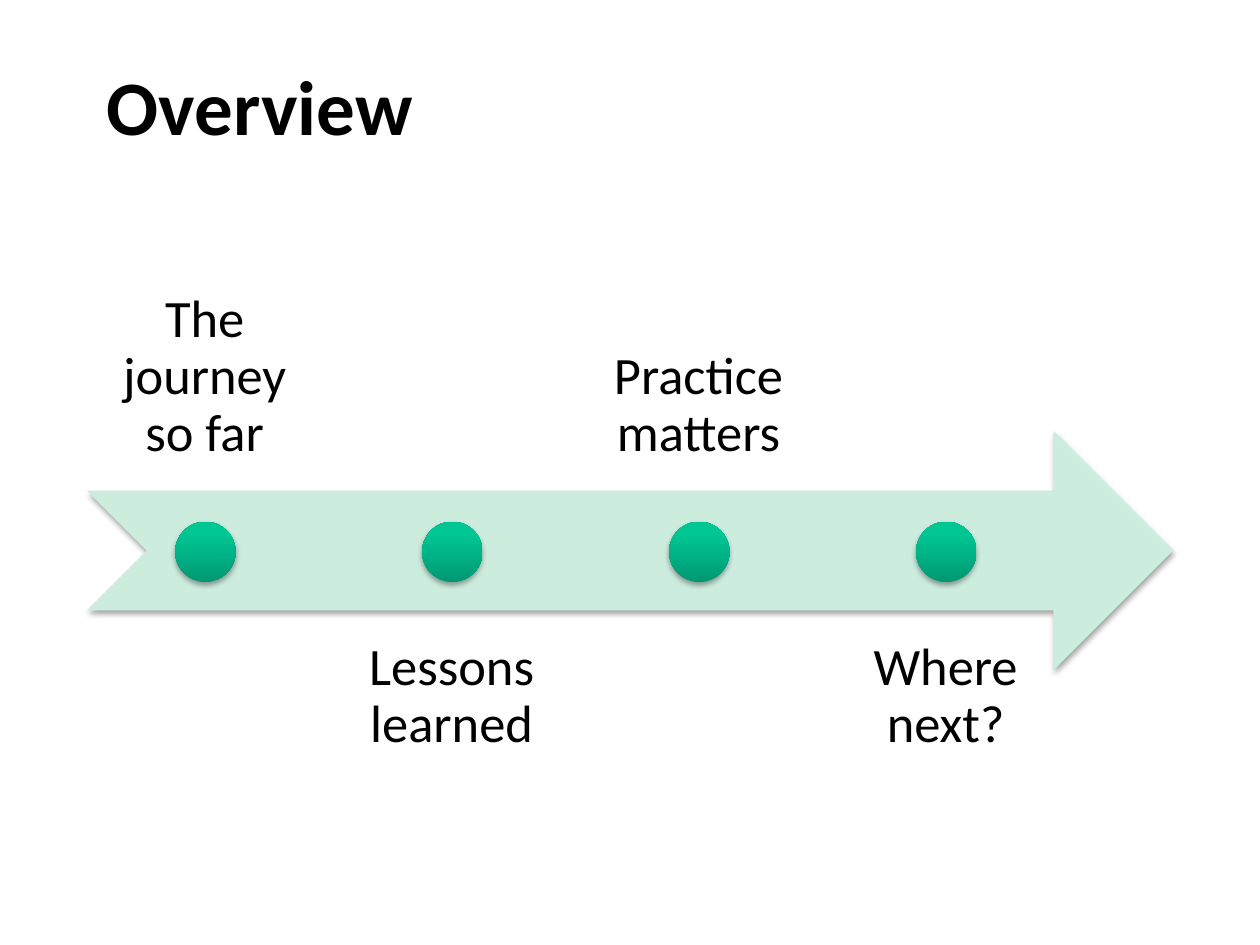
import copy
import pptx
import pptx.util
import pptx.dml.color
import pptx.enum.shapes
import pptx.enum.text
import pptx.oxml
from pptx.util import Inches

SHAPE = pptx.enum.shapes.MSO_SHAPE
ANCHOR = pptx.enum.text.MSO_ANCHOR
ALIGN = pptx.enum.text.PP_ALIGN
SHADOW = (
    '<a:outerShdw xmlns:a="http://schemas.openxmlformats.org/drawingml/2006/main" '
    'blurRad="39370" dist="22860" dir="5400000" rotWithShape="0">'
    '<a:srgbClr val="000000"><a:alpha val="35000"/></a:srgbClr></a:outerShdw>'
)


def rgb(value):
    return pptx.dml.color.RGBColor.from_string(value)


def add_shadowed(kind, left, top, width, height):
    sp = s.shapes.add_shape(kind, Inches(left), Inches(top), Inches(width), Inches(height))
    sp.line.fill.background()
    sp.shadow.inherit = False
    effects = sp._element.spPr.find(pptx.oxml.ns.qn("a:effectLst"))
    effects.append(pptx.oxml.parse_xml(SHADOW))
    return sp


prs = pptx.Presentation()
prs.slide_width, prs.slide_height = Inches(10), Inches(7.5)
s = prs.slides.add_slide(prs.slide_layouts[6])

title = s.shapes.add_textbox(Inches(0.75), Inches(0.25), Inches(8.5), Inches(1.17))
tf = title.text_frame
tf.word_wrap = True
tf.vertical_anchor = ANCHOR.MIDDLE
tf.text = "Overview"
r = tf.paragraphs[0].runs[0]
r.font.name, r.font.size, r.font.bold = "Calibri", pptx.util.Pt(44), True
r.font.color.rgb = rgb("000000")

arrow = add_shadowed(SHAPE.NOTCHED_RIGHT_ARROW, 0.69, 3.42, 8.62, 1.9)
arrow.fill.solid()
arrow.fill.fore_color.rgb = rgb("CCECDE")

steps = ["The journey so far", "Lessons learned", "Practice matters", "Where next?"]
stops = [(0, "009872"), (0.8, "00C694"), (1, "00C795")]
pitch = 1.96
for i, step in enumerate(steps):
    above = i % 2 == 0
    label = s.shapes.add_textbox(
        Inches(0.69 + i * pitch), Inches(2 if above else 4.85), Inches(1.87), Inches(1.9))
    tf = label.text_frame
    tf.word_wrap = True
    tf.vertical_anchor = ANCHOR.BOTTOM if above else ANCHOR.TOP
    tf.margin_left = tf.margin_right = tf.margin_top = tf.margin_bottom = Inches(0.23)
    tf.text = step
    p = tf.paragraphs[0]
    p.alignment = ALIGN.CENTER
    p.line_spacing = 0.9
    r = p.runs[0]
    r.font.name, r.font.size = "Calibri", pptx.util.Pt(30)
    r.font.color.rgb = rgb("000000")

    dot = add_shadowed(SHAPE.OVAL, 1.39 + i * pitch, 4.14, 0.48, 0.48)
    dot.fill.gradient()
    dot.fill.gradient_angle = 90
    first = dot.fill.gradient_stops[0]._gs
    first.addnext(copy.deepcopy(first))
    for stop, (position, color) in zip(dot.fill.gradient_stops, stops):
        stop.position = position
        stop.color.rgb = rgb(color)

prs.save("out.pptx")
